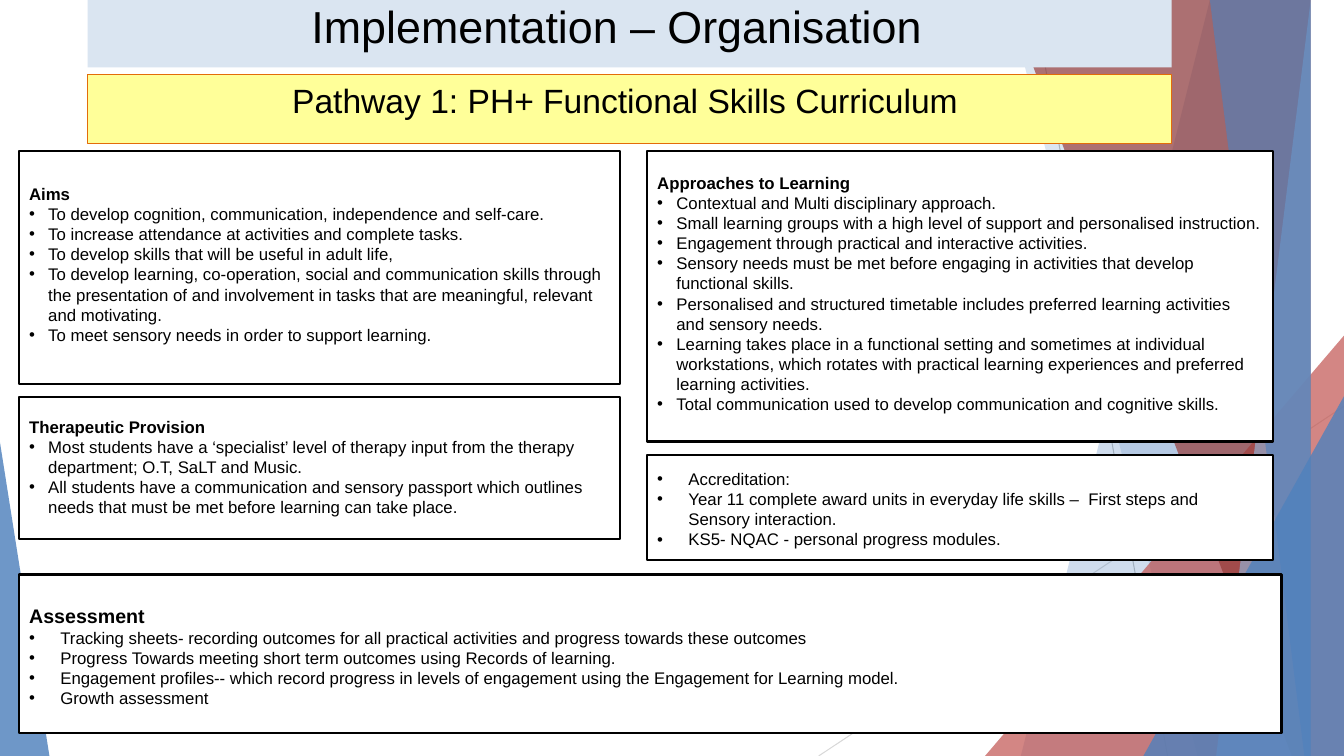
from dataclasses import dataclass

from lxml import etree
from pptx import Presentation
from pptx.dml.color import RGBColor
from pptx.enum import shapes, text
from pptx.oxml import ns
from pptx.util import Inches, Pt

WIDTH, HEIGHT = 13.33, 7.5
FONT = "Arial"
COLOURS = {
    "black": "000000", "white": "FFFFFF", "blue": "4F81BD", "pale blue": "93B3D7",
    "red": "C0504D", "dark red": "953734", "heading": "DAE5F1", "yellow": "FFFF99",
    "orange": "E36C09", "grey": "BFBFBF", "light grey": "D8D8D8",
}


@dataclass
class Ray:
    start: tuple[float, float]
    end: tuple[float, float]
    colour: str


@dataclass
class Facet:
    """A full-height band from a slanted left edge to the slide's right edge."""
    top_left: float
    bottom_left: float
    colour: str
    opacity: int


@dataclass
class Corner:
    """A right triangle standing on the slide's bottom edge."""
    left: float
    width: float
    height: float
    apex: float
    colour: str
    opacity: int


@dataclass
class Banner:
    wording: str
    top: float
    height: float
    size: float
    fill: str
    line: str | None
    right_inset: float
    line_spacing: float


@dataclass
class Panel:
    box: tuple[float, float, float, float]
    top_inset: float
    indent: float
    bullets: list[str]
    heading: str = ""
    heading_size: float = 12
    fill: str | None = "white"


RAYS = [
    Ray((10.25, 0), (11.58, HEIGHT), "grey"),
    Ray((WIDTH, 4.03), (8.12, HEIGHT), "light grey"),
]
BACKDROP = [
    Facet(12.28, 10.04, "blue", 27),
    Facet(10.5, 11.83, "blue", 20),
    Corner(9.77, 3.56, 4.17, 1, "red", 69),
    Facet(10.21, 12.91, "dark red", 67),
    Facet(13.03, 11.92, "pale blue", 67),
    Facet(11.96, 13.18, "blue", 62),
    Corner(11.34, 1.99, 3.57, 1, "blue", 80),
    Corner(0, 0.49, 3.11, 0, "blue", 82),
]
PANELS = [
    Panel((0.19, 1.5, 5.96, 2.31), 0.32, 0.19, [
        "To develop cognition, communication, independence and self-care.",
        "To increase attendance at activities and complete tasks.",
        "To develop skills that will be useful in adult life,",
        "To develop learning, co-operation, social and communication skills through the "
        "presentation of and involvement in tasks that are meaningful, relevant and motivating.",
        "To meet sensory needs in order to support learning.",
    ], "Aims", fill=None),
    Panel((6.42, 1.5, 6.21, 2.88), 0.21, 0.19, [
        "Contextual and Multi disciplinary approach.",
        "Small learning groups with a high level of support and personalised instruction.",
        "Engagement through practical and interactive activities.",
        "Sensory needs must be met before engaging in activities that develop functional skills.",
        "Personalised and structured timetable includes preferred learning activities "
        "and sensory needs.",
        "Learning takes place in a functional setting and sometimes at individual workstations, "
        "which rotates with practical learning experiences and preferred learning activities.",
        "Total communication used to develop communication and cognitive skills.",
    ], "Approaches to Learning"),
    Panel((6.42, 4.51, 6.21, 1.05), 0.14, 0.31, [
        "Accreditation:",
        "Year 11 complete award units in everyday life skills –  First steps and "
        "Sensory interaction.",
        "KS5- NQAC - personal progress modules.",
    ]),
    Panel((0.19, 3.94, 5.96, 1.41), 0.19, 0.19, [
        "Most students have a ‘specialist’ level of therapy input from the therapy department; "
        "O.T, SaLT and Music.",
        "All students have a communication and sensory passport which outlines needs that must "
        "be met before learning can take place.",
    ], "Therapeutic Provision", fill=None),
    Panel((0.19, 5.7, 12.52, 1.57), 0.29, 0.31, [
        "Tracking sheets- recording outcomes for all practical activities and progress towards "
        "these outcomes",
        "Progress Towards meeting short term outcomes using Records of learning.",
        "Engagement profiles-- which record progress in levels of engagement using the "
        "Engagement for Learning model.",
        "Growth assessment",
    ], "Assessment", 14),
]
BANNERS = [
    Banner("Pathway 1: PH+ Functional Skills Curriculum", 0.74, 0.68, 24,
           "yellow", "orange", 0.19, 1),
    Banner("Implementation – Organisation", 0, 0.67, 32, "heading", None, 0.35, 0.9),
]


def rgb(name: str) -> RGBColor:
    return RGBColor.from_string(COLOURS[name])


def style(shape, fill: str | None, line: str | None = None, weight: float = 0.75,
          opacity: int = 100) -> None:
    shape.shadow.inherit = False
    if fill:
        shape.fill.solid()
        shape.fill.fore_color.rgb = rgb(fill)
        if opacity < 100:
            colour = shape.fill._xPr.find(".//" + ns.qn("a:srgbClr"))
            etree.SubElement(colour, ns.qn("a:alpha"), val=str(opacity * 1000))
    else:
        shape.fill.background()
    if line:
        shape.line.color.rgb = rgb(line)
        shape.line.width = Pt(weight)
    else:
        shape.line.fill.background()


def write(paragraph, wording: str, *, size: float = 12, bold: bool = False,
          align=text.PP_ALIGN.LEFT, spacing: float = 1, indent: float = 0) -> None:
    """Fill a paragraph; an indent makes it a bullet with that hanging indent."""
    paragraph.alignment = align
    paragraph.line_spacing = spacing
    run = paragraph.add_run()
    run.text = wording
    run.font.name, run.font.size, run.font.bold = FONT, Pt(size), bold
    run.font.color.rgb = rgb("black")
    if indent:
        properties = paragraph._p.get_or_add_pPr()
        properties.set("marL", str(Inches(indent)))
        properties.set("indent", str(-Inches(indent)))
        etree.SubElement(properties, ns.qn("a:buFont"), typeface=FONT)
        etree.SubElement(properties, ns.qn("a:buChar"), char="•")


def prepare_frame(shape, top: float = 0.05, right: float = 0.1):
    frame = shape.text_frame
    frame.word_wrap = True
    frame.vertical_anchor = text.MSO_ANCHOR.TOP
    frame.margin_left, frame.margin_right = Inches(0.1), Inches(right)
    frame.margin_top, frame.margin_bottom = Inches(top), Inches(0.05)
    return frame


def draw_ray(slide, ray: Ray) -> None:
    connector = slide.shapes.add_connector(
        shapes.MSO_CONNECTOR.STRAIGHT, *map(Inches, ray.start + ray.end))
    connector.line.color.rgb = rgb(ray.colour)
    connector.line.width = Pt(0.75)
    etree.SubElement(connector._element.spPr, ns.qn("a:effectLst"))


def draw_backdrop(slide, part: Facet | Corner) -> None:
    if isinstance(part, Facet):
        builder = slide.shapes.build_freeform(part.top_left, 0, scale=Inches(1))
        builder.add_line_segments(
            [(WIDTH, 0), (WIDTH, HEIGHT), (part.bottom_left, HEIGHT)], close=True)
        shape = builder.convert_to_shape()
    else:
        box = part.left, HEIGHT - part.height, part.width, part.height
        shape = slide.shapes.add_shape(
            shapes.MSO_SHAPE.ISOSCELES_TRIANGLE, *map(Inches, box))
        shape.adjustments[0] = part.apex
    style(shape, part.colour, opacity=part.opacity)


def draw_panel(slide, panel: Panel) -> None:
    shape = slide.shapes.add_shape(
        shapes.MSO_SHAPE.FLOWCHART_PROCESS, *map(Inches, panel.box))
    style(shape, panel.fill, "black", 1.5)
    frame = prepare_frame(shape, panel.top_inset)
    paragraph = frame.paragraphs[0]
    if panel.heading:
        write(paragraph, panel.heading, size=panel.heading_size, bold=True)
        paragraph = frame.add_paragraph()
    for number, bullet in enumerate(panel.bullets):
        write(paragraph if number == 0 else frame.add_paragraph(), bullet, indent=panel.indent)


def draw_banner(slide, banner: Banner) -> None:
    box = 0.87, banner.top, 10.75, banner.height
    shape = slide.shapes.add_shape(shapes.MSO_SHAPE.RECTANGLE, *map(Inches, box))
    style(shape, banner.fill, banner.line)
    frame = prepare_frame(shape, right=banner.right_inset)
    write(frame.paragraphs[0], banner.wording, size=banner.size,
          align=text.PP_ALIGN.CENTER, spacing=banner.line_spacing)


def main() -> None:
    presentation = Presentation()
    presentation.slide_width, presentation.slide_height = Inches(WIDTH), Inches(HEIGHT)
    slide = presentation.slides.add_slide(presentation.slide_layouts[6])
    for draw, items in ((draw_ray, RAYS), (draw_backdrop, BACKDROP),
                        (draw_panel, PANELS), (draw_banner, BANNERS)):
        for item in items:
            draw(slide, item)
    presentation.save("out.pptx")


if __name__ == "__main__":
    main()
